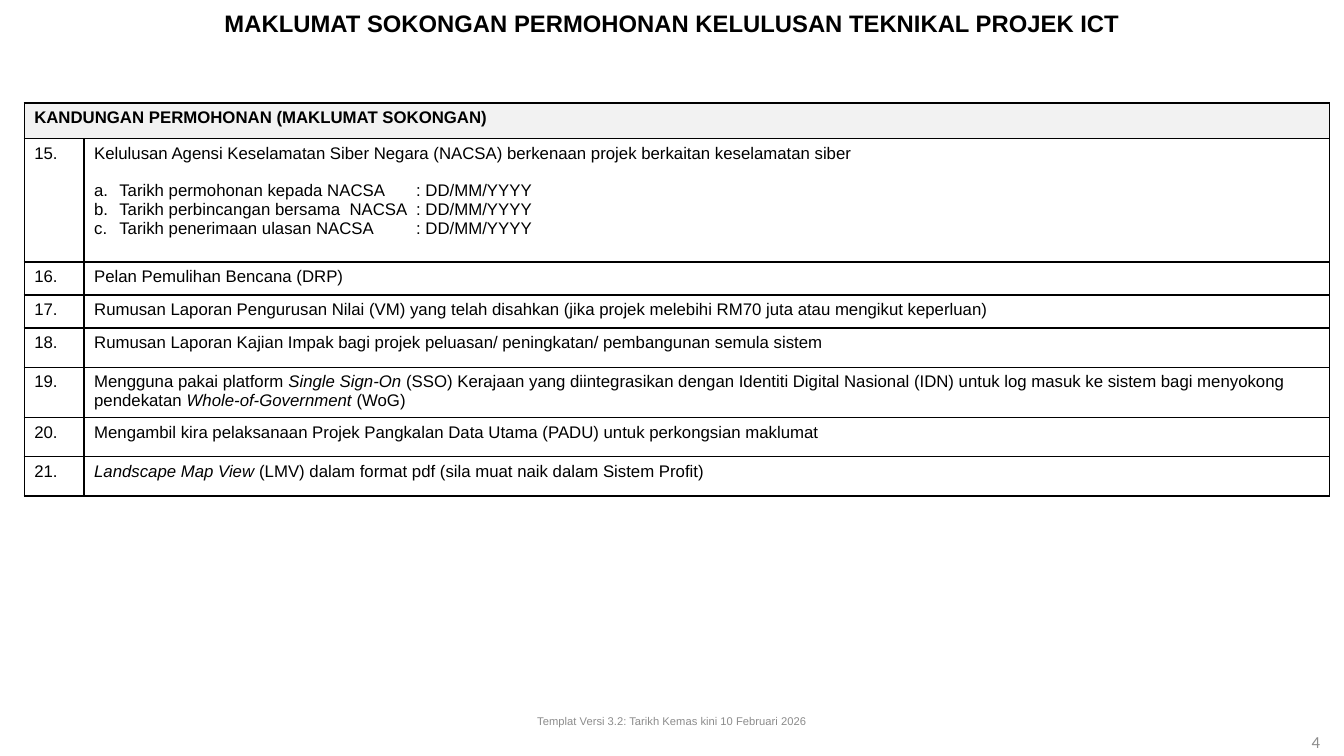
from lxml.etree import SubElement
from pptx import Presentation
from pptx.dml.color import RGBColor
from pptx.enum.text import MSO_ANCHOR as ANCHOR, PP_ALIGN as ALIGN
from pptx.oxml import parse_xml
from pptx.oxml.ns import nsdecls, qn
from pptx.util import Pt

BLACK, GREY, HEADER_FILL = "000000", "8C8C8C", "F2F2F2"
HEADING = "KANDUNGAN PERMOHONAN (MAKLUMAT SOKONGAN)"
FIRST_NUMBER = 15
LINE_GAP = 13.4

# Row height and text; every second part between asterisks is italic
ITEMS = [
    (88, "Kelulusan Agensi Keselamatan Siber Negara (NACSA) berkenaan projek "
         "berkaitan keselamatan siber"),
    (23.6, "Pelan Pemulihan Bencana\u00a0(DRP)".replace("\u00a0", " ")),
    (23.6, "Rumusan Laporan Pengurusan Nilai (VM) yang telah disahkan (jika projek "
           "melebihi RM70 juta atau mengikut keperluan)"),
    (28, "Rumusan Laporan Kajian Impak bagi projek peluasan/ peningkatan/ "
         "pembangunan semula sistem"),
    (34, "Mengguna pakai platform *Single Sign-On* (SSO) Kerajaan yang diintegrasikan "
         "dengan Identiti Digital Nasional (IDN) untuk log masuk ke sistem bagi "
         "menyokong pendekatan *Whole-of-Government* (WoG)"),
    (28, "Mengambil kira pelaksanaan Projek Pangkalan Data Utama (PADU) untuk "
         "perkongsian maklumat"),
    (28, "*Landscape Map View *(LMV) dalam format pdf (sila muat naik dalam Sistem Profit)"),
]
DATES = ["Tarikh permohonan kepada NACSA", "Tarikh perbincangan bersama  NACSA",
         "Tarikh penerimaan ulasan NACSA"]


def rgb(value):
    return RGBColor.from_string(value)


def style(font, size, color=BLACK, bold=False, name="Arial"):
    font.name, font.size, font.bold = name, Pt(size), bold
    font.color.rgb = rgb(color)


def add_label(s, box, text, size, color, align, anchor=ANCHOR.MIDDLE, **look):
    tf = s.shapes.add_textbox(*map(Pt, box)).text_frame
    tf.word_wrap = True
    tf.vertical_anchor = anchor
    p = tf.paragraphs[0]
    p.text, p.alignment = text, align
    style(p.runs[0].font, size, color, **look)


def write_rich(p, text):
    for i, part in enumerate(text.split("*")):
        if part:
            r = p.add_run()
            r.text = part
            style(r.font, 12)
            r.font.italic = i % 2 == 1


def add_date(tf, text, first):
    """Lettered line with its date on a tab stop."""
    p = tf.add_paragraph()
    pPr = p._p.get_or_add_pPr()
    pPr.set("marL", str(Pt(18)))
    pPr.set("indent", str(-Pt(18)))
    if first:
        p.space_before = Pt(LINE_GAP)
    SubElement(pPr, qn("a:buAutoNum"), type="alphaLcPeriod")
    tabs = SubElement(pPr, qn("a:tabLst"))
    SubElement(tabs, qn("a:tab"), pos=str(Pt(230)), algn="l")
    write_rich(p, text + "\t: DD/MM/YYYY")


def frame_cell(cell, fill=None):
    if fill:
        cell.fill.solid()
        cell.fill.fore_color.rgb = rgb(fill)
    else:
        cell.fill.background()
    tcPr = cell._tc.get_or_add_tcPr()
    for i, side in enumerate("LRTB"):
        tcPr.insert(i, parse_xml(
            f'<a:ln{side} {nsdecls("a")} w="{Pt(1)}"><a:solidFill>'
            f'<a:srgbClr val="{BLACK}"/></a:solidFill></a:ln{side}>'))


def add_items(s, left, top, width):
    heights = [25.6] + [height for height, _ in ITEMS]
    table = s.shapes.add_table(len(heights), 2, Pt(left), Pt(top), Pt(width),
                               Pt(sum(heights))).table
    number_width = 42.8
    table.columns[0].width = Pt(number_width)
    table.columns[1].width = Pt(width - number_width)
    for row, height in zip(table.rows, heights):
        row.height = Pt(height)

    # Heading row
    for cell in table.rows[0].cells:
        frame_cell(cell, HEADER_FILL)
    heading = table.cell(0, 0)
    heading.merge(table.cell(0, 1))
    heading.text_frame.text = HEADING
    style(heading.text_frame.paragraphs[0].runs[0].font, 12, bold=True)

    # Numbered rows
    for i, (_, text) in enumerate(ITEMS):
        for cell, content in zip(table.rows[i + 1].cells, (f"{FIRST_NUMBER + i}.", text)):
            frame_cell(cell)
            write_rich(cell.text_frame.paragraphs[0], content)

    # Dates under the first item
    for i, text in enumerate(DATES):
        add_date(table.cell(1, 1).text_frame, text, first=i == 0)


def main():
    prs = Presentation()
    prs.slide_width, prs.slide_height = Pt(960), Pt(540)
    s = prs.slides.add_slide(prs.slide_layouts[6])
    add_label(s, (0, 3, 960, 45), "MAKLUMAT SOKONGAN PERMOHONAN KELULUSAN TEKNIKAL PROJEK ICT",
              17, BLACK, ALIGN.CENTER, ANCHOR.TOP, bold=True)
    add_items(s, 17.3, 73.6, 932.4)
    add_label(s, (734, 515, 216, 29), "4", 12, GREY, ALIGN.RIGHT, name="Calibri")
    add_label(s, (318, 500.5, 324, 29), "Templat Versi 3.2: Tarikh Kemas kini 10 Februari 2026",
              8, GREY, ALIGN.CENTER)
    prs.save("out.pptx")


if __name__ == "__main__":
    main()
